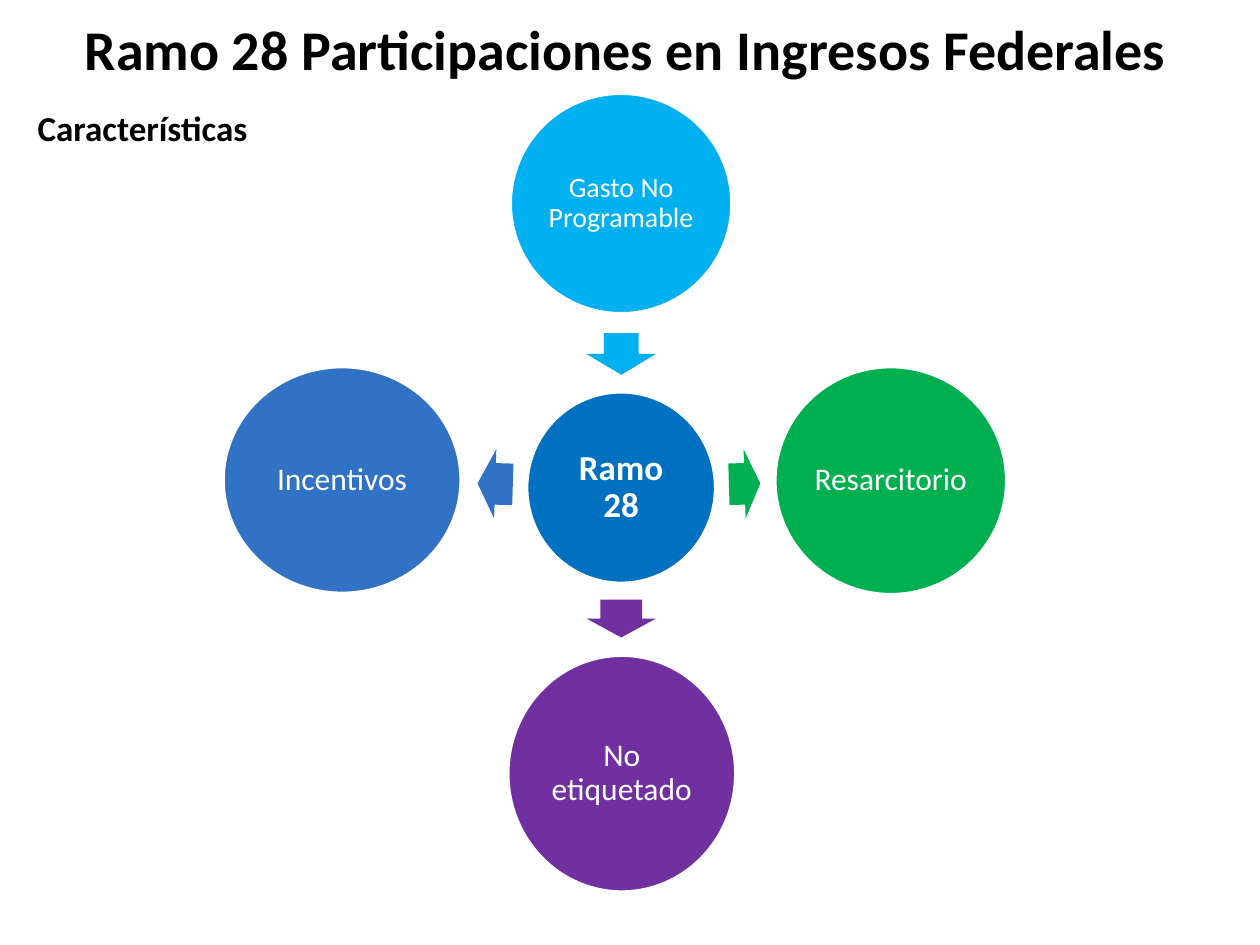
import pptx
import pptx.util
import pptx.dml.color
import pptx.enum.shapes
import pptx.enum.text

Inch = pptx.util.Inches
RGB = pptx.dml.color.RGBColor
KIND = pptx.enum.shapes.MSO_SHAPE
ALIGN = pptx.enum.text.PP_ALIGN
ANCHOR = pptx.enum.text.MSO_ANCHOR

BLACK = RGB(0x00, 0x00, 0x00)
WHITE = RGB(0xFF, 0xFF, 0xFF)
BLUE = RGB(0x00, 0x70, 0xC0)
SKY = RGB(0x00, 0xB0, 0xF0)
GREEN = RGB(0x00, 0xB0, 0x50)
PURPLE = RGB(0x70, 0x30, 0xA0)
STEEL = RGB(0x31, 0x72, 0xC4)

WIDE, HIGH = 10, 7.5
HUB = ("Ramo 28", (4.18, 3.11, 1.5, 1.52), BLUE, 20, True)
# label, circle box, colour, text size
NODES = [
    ("Gasto No Programable", (4.05, 0.74, 1.76, 1.75), SKY, 16),
    ("Resarcitorio", (6.15, 2.91, 1.84, 1.81), GREEN, 18),
    ("No etiquetado", (4.03, 5.2, 1.81, 1.88), PURPLE, 18),
    ("Incentivos", (1.77, 2.91, 1.89, 1.8), STEEL, 18),
]
# centre, length, turn, shaft share; in the order of NODES
ARROWS = [
    ((4.93, 2.81), 0.33, 90, 0.5),
    ((5.91, 3.84), 0.25, 358.3, 0.6),
    ((4.93, 4.91), 0.3, 90, 0.6),
    ((3.93, 3.84), 0.28, 181.8, 0.6),
]
HEAD = 0.55


def write(frame, text, anchor, align, form):
    frame.word_wrap = True
    frame.vertical_anchor = anchor
    para = frame.paragraphs[0]
    para.alignment = align
    run = para.add_run()
    run.text = text
    run.font.color.rgb = form["color"]
    for key in ("name", "size", "bold"):
        setattr(run.font, key, form[key])
    return para


def style(size, color, bold=False):
    return {"name": "Calibri", "size": pptx.util.Pt(size),
            "bold": bold, "color": color}


def label(slide, box, text, size, anchor, align):
    frame = slide.shapes.add_textbox(*map(Inch, box)).text_frame
    write(frame, text, anchor, align, style(size, BLACK, True))


def solid(slide, kind, box, color):
    shape = slide.shapes.add_shape(kind, *map(Inch, box))
    shape.shadow.inherit = False
    shape.fill.solid()
    shape.fill.fore_color.rgb = color
    shape.line.fill.background()
    return shape


def circle(slide, text, box, color, size, bold=False):
    shape = solid(slide, KIND.OVAL, box, color)
    shape.line.color.rgb = WHITE
    shape.line.width = pptx.util.Pt(2)
    frame = shape.text_frame
    for side in ("left", "right", "top", "bottom"):
        setattr(frame, "margin_" + side, Inch(0.03))
    para = write(frame, text, ANCHOR.MIDDLE, ALIGN.CENTER,
                 style(size, WHITE, bold))
    para.line_spacing = 0.9


def arrow(slide, spot, span, turn, shaft, color):
    box = (spot[0] - span / 2, spot[1] - HEAD / 2, span, HEAD)
    shape = solid(slide, KIND.RIGHT_ARROW, box, color)
    shape.adjustments[0] = shaft
    shape.adjustments[1] = 0.5
    shape.rotation = turn


def wheel(slide):
    """Hub circle with an arrow and a circle on each side."""
    circle(slide, *HUB)
    for node, mark in zip(NODES, ARROWS):
        arrow(slide, *mark, node[2])
        circle(slide, *node)


def main():
    deck = pptx.Presentation()
    deck.slide_width, deck.slide_height = Inch(WIDE), Inch(HIGH)
    slide = deck.slides.add_slide(deck.slide_layouts[6])
    label(slide, (0.16, 0, 9.61, 0.76),
          "Ramo 28 Participaciones en Ingresos Federales", 32,
          ANCHOR.MIDDLE, ALIGN.CENTER)
    wheel(slide)
    label(slide, (0.2, 0.76, 9.53, 0.47), "Características", 20,
          ANCHOR.BOTTOM, ALIGN.LEFT)
    deck.save("out.pptx")


if __name__ == "__main__":
    main()
